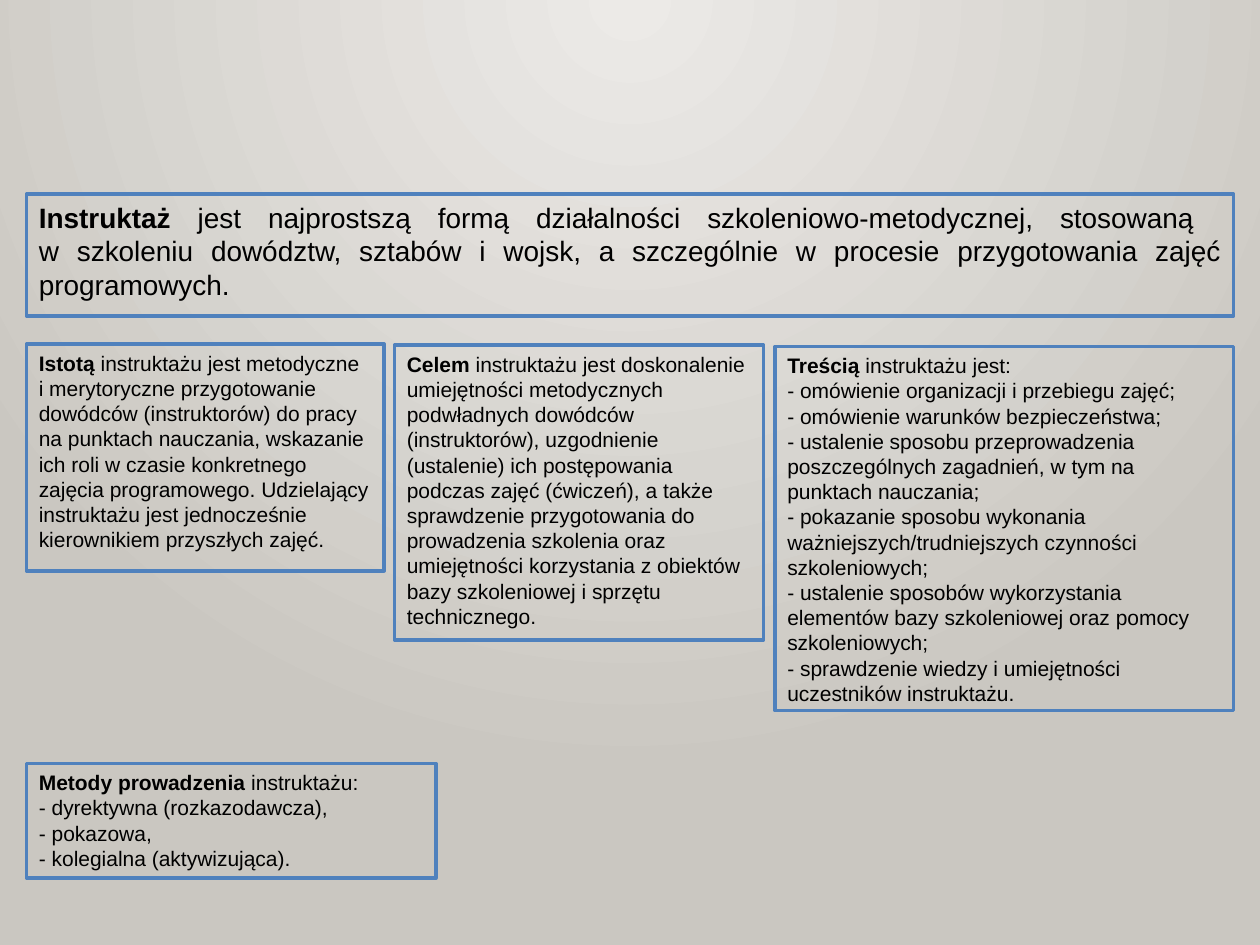
import pptx
import pptx.util
import pptx.dml.color
import pptx.enum.shapes
import pptx.enum.text
import pptx.oxml
import pptx.oxml.ns

Pt = pptx.util.Pt
RGBColor = pptx.dml.color.RGBColor
ALIGN = pptx.enum.text.PP_ALIGN

LIGHT = RGBColor(0xEC, 0xEA, 0xE7)
GREY = RGBColor(0xCA, 0xC7, 0xC1)
BLUE = RGBColor(0x4F, 0x81, 0xBD)
BLACK = RGBColor(0, 0, 0)

LEFT = 15.1
RIGHT = 704.9


def add_text(paragraph, text, size, bold):
    for index, line in enumerate(text.split("\n")):
        if index:
            paragraph.add_line_break()
        run = paragraph.add_run()
        run.text = line
        run.font.name = "Arial"
        run.font.size = Pt(size)
        run.font.bold = bold
        run.font.color.rgb = BLACK


presentation = pptx.Presentation()
presentation.slide_width = Pt(720)
presentation.slide_height = Pt(540)
slide = presentation.slides.add_slide(presentation.slide_layouts[6])

backdrop = slide.background.fill
backdrop.gradient()
for stop, color, position in zip(backdrop.gradient_stops, (LIGHT, GREY), (0, 1)):
    stop.color.rgb = color
    stop.position = position
linear = next(slide.element.iter(pptx.oxml.ns.qn("a:lin")))
radial = pptx.oxml.parse_xml(
    f'<a:path {pptx.oxml.ns.nsdecls("a")} path="circle">'
    '<a:fillToRect l="43000" t="0" r="43000" b="100000"/></a:path>'
)
linear.getparent().replace(linear, radial)

definition = (
    "Instruktaż",
    [" jest najprostszą formą działalności szkoleniowo-metodycznej, stosowaną \n"
     "w szkoleniu dowództw, sztabów i wojsk, a szczególnie w procesie "
     "przygotowania zajęć programowych."],
)
essence = (
    "Istotą ",
    ["instruktażu jest metodyczne \ni merytoryczne przygotowanie dowódców "
     "(instruktorów) do pracy na punktach nauczania, wskazanie ich roli w czasie "
     "konkretnego zajęcia programowego. Udzielający instruktażu jest jednocześnie "
     "kierownikiem przyszłych zajęć."],
)
purpose = (
    "Celem ",
    ["instruktażu jest doskonalenie umiejętności metodycznych podwładnych dowódców "
     "(instruktorów), uzgodnienie (ustalenie) ich postępowania podczas zajęć "
     "(ćwiczeń), a także sprawdzenie przygotowania do prowadzenia szkolenia oraz "
     "umiejętności korzystania z obiektów bazy szkoleniowej i sprzętu technicznego."],
)
content = (
    "Treścią ",
    ["instruktażu jest:",
     "- omówienie organizacji i przebiegu zajęć;",
     "- omówienie warunków bezpieczeństwa;",
     "- ustalenie sposobu przeprowadzenia poszczególnych zagadnień, w tym na "
     "punktach nauczania;",
     "- pokazanie sposobu wykonania ważniejszych/trudniejszych czynności "
     "szkoleniowych;",
     "- ustalenie sposobów wykorzystania elementów bazy szkoleniowej oraz pomocy "
     "szkoleniowych;",
     "- sprawdzenie wiedzy i umiejętności uczestników instruktażu."],
)
methods = (
    "Metody prowadzenia ",
    ["instruktażu:",
     "- dyrektywna (rozkazodawcza),",
     "- pokazowa,",
     "- kolegialna (aktywizująca)."],
)

sections = [
    (definition, LEFT, 110.9, RIGHT, 69.8, 16, ALIGN.JUSTIFY),
    (essence, LEFT, 196.6, 219.6, 129.6, 12, ALIGN.LEFT),
    (purpose, 225.4, 197.3, 436.4, 168.5, 12, ALIGN.LEFT),
    (content, 442.8, 198, RIGHT, 208.1, 12, ALIGN.LEFT),
    (methods, LEFT, 436.3, 249.1, 65.5, 12, ALIGN.LEFT),
]

for (term, lines), left, top, right, height, size, alignment in sections:
    box = slide.shapes.add_shape(
        pptx.enum.shapes.MSO_SHAPE.RECTANGLE,
        Pt(left), Pt(top), Pt(right - left), Pt(height),
    )
    box.shadow.inherit = False
    box.element.set("useBgFill", "1")
    box.line.color.rgb = BLUE
    box.line.width = Pt(2)
    frame = box.text_frame
    frame.word_wrap = True
    frame.vertical_anchor = pptx.enum.text.MSO_ANCHOR.TOP
    for index, line in enumerate(lines):
        paragraph = frame.add_paragraph() if index else frame.paragraphs[0]
        paragraph.alignment = alignment
        if index == 0:
            add_text(paragraph, term, size, True)
        add_text(paragraph, line, size, False)

presentation.save("out.pptx")
